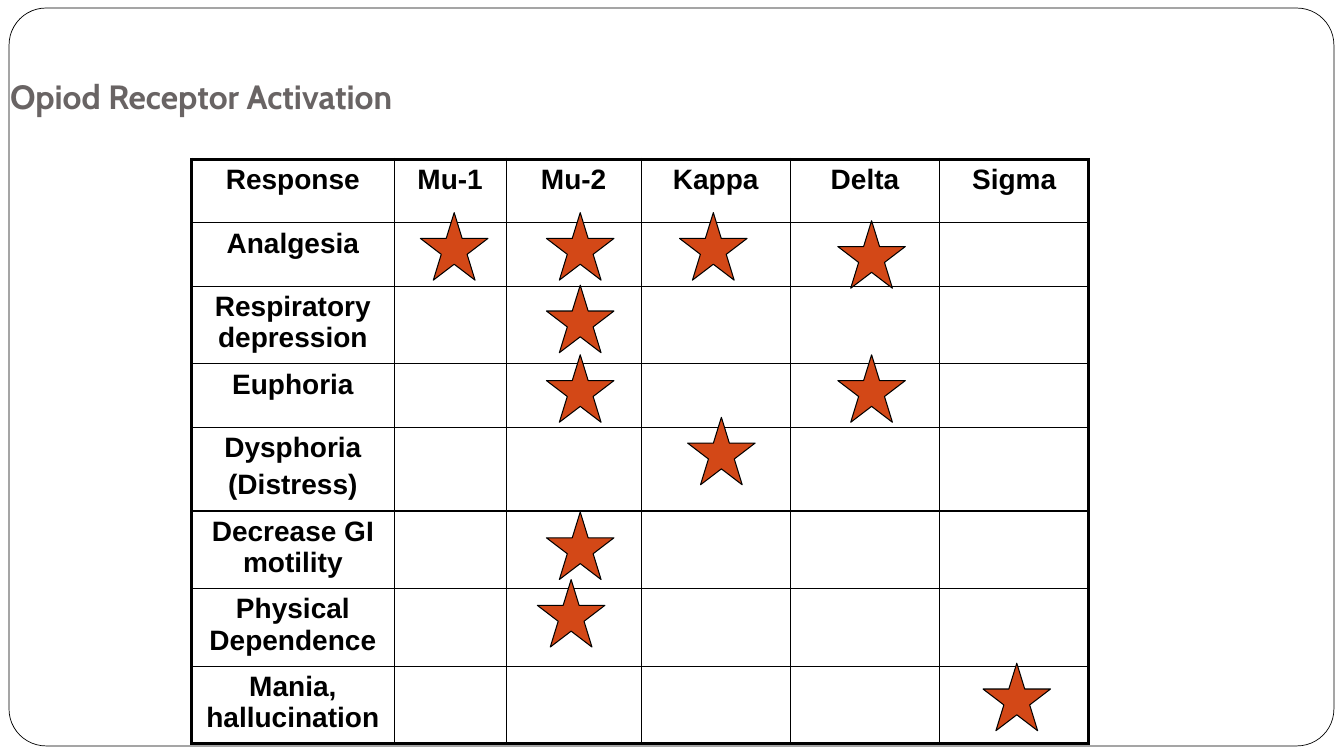
from itertools import accumulate

from lxml.etree import SubElement
from pptx import Presentation
from pptx.dml.color import RGBColor
from pptx.enum.shapes import MSO_SHAPE
from pptx.enum.text import MSO_ANCHOR, MSO_AUTO_SIZE, PP_ALIGN
from pptx.oxml.ns import qn
from pptx.util import Inches, Pt

BLACK = RGBColor(0x00, 0x00, 0x00)
WHITE = RGBColor(0xFF, 0xFF, 0xFF)
GRAY = RGBColor(0x69, 0x64, 0x64)
ORANGE = RGBColor(0xD3, 0x48, 0x17)

# Grid of the table, in inches
LEFT, TOP = 1.9, 1.58
COLS = [2.01, 1.11, 1.34, 1.48, 1.48, 1.48]
ROWS = [0.63, 0.63, 0.77, 0.63, 0.83, 0.77, 0.77, 0.77]
COL_X = list(accumulate(COLS, initial=LEFT))
ROW_Y = list(accumulate(ROWS, initial=TOP))
STAR = 0.67
THIN, THICK = Pt(1), Pt(2.25)

RECEPTORS = ["Mu-1", "Mu-2", "Kappa", "Delta", "Sigma"]
# Each response with its stars: receptor, offset from the cell's corner
RESPONSES = [
    ("Analgesia", [("Mu-1", 0.26, -0.1), ("Mu-2", 0.4, -0.1),
                   ("Kappa", 0.38, -0.1), ("Delta", 0.47, -0.02)]),
    ("Respiratory depression", [("Mu-2", 0.4, -0.01)]),
    ("Euphoria", [("Mu-2", 0.4, -0.09), ("Delta", 0.47, -0.09)]),
    ("Dysphoria\n(Distress)", [("Kappa", 0.46, -0.1)]),
    ("Decrease GI motility", [("Mu-2", 0.4, 0.01)]),
    ("Physical Dependence", [("Mu-2", 0.31, -0.09)]),
    ("Mania, hallucination", [("Sigma", 0.43, -0.03)]),
]


def add_run(p, text, font, size, color):
    r = p.add_run()
    r.text = text
    r.font.name, r.font.size, r.font.bold = font, Pt(size), True
    r.font.color.rgb = color


def add_outlined(s, kind, box, fill, width):
    sp = s.shapes.add_shape(kind, *(Inches(v) for v in box))
    sp.shadow.inherit = False
    sp.fill.solid()
    sp.fill.fore_color.rgb = fill
    sp.line.color.rgb = BLACK
    sp.line.width = Pt(width)
    return sp


def set_title(s, text):
    title = s.shapes.title
    title.left, title.top = Inches(0), Inches(0.3)
    title.width, title.height = Inches(9), Inches(0.95)
    tf = title.text_frame
    tf.auto_size = MSO_AUTO_SIZE.NONE
    tf.word_wrap = True
    tf.vertical_anchor = MSO_ANCHOR.BOTTOM
    tf.margin_left = tf.margin_right = tf.margin_bottom = Inches(0.1)
    tf.margin_top = Inches(0.05)
    p = tf.paragraphs[0]
    p.alignment = PP_ALIGN.LEFT
    add_run(p, text, "Cabin", 24, GRAY)
    return title


def set_borders(cell, edges):
    """Outer edges are thick, inner ones thin."""
    tcPr = cell._tc.get_or_add_tcPr()
    for i, (tag, outer) in enumerate(edges.items()):
        ln = SubElement(tcPr, qn(f"a:{tag}"), w=str(THICK if outer else THIN))
        fill = SubElement(ln, qn("a:solidFill"))
        SubElement(fill, qn("a:srgbClr"), val=str(BLACK))
        tcPr.insert(i, ln)


def fill_cell(cell, text):
    for i, line in enumerate(text.split("\n")):
        tf = cell.text_frame
        p = tf.add_paragraph() if i else tf.paragraphs[0]
        p.alignment = PP_ALIGN.CENTER
        p.space_before = Pt(4 if i else 0)
        add_run(p, line, "Arial", 20, BLACK)


def add_response_table(s):
    frame = s.shapes.add_table(len(ROWS), len(COLS), Inches(LEFT), Inches(TOP),
                               Inches(sum(COLS)), Inches(sum(ROWS)))
    table = frame.table
    table.first_row = table.horz_banding = False
    for col, width in zip(table.columns, COLS):
        col.width = Inches(width)
    for row, height in zip(table.rows, ROWS):
        row.height = Inches(height)
    for r in range(len(ROWS)):
        for c in range(len(COLS)):
            cell = table.cell(r, c)
            cell.fill.background()
            set_borders(cell, {"lnL": c == 0, "lnR": c == len(COLS) - 1,
                               "lnT": r == 0, "lnB": r == len(ROWS) - 1})
    for c, name in enumerate(["Response"] + RECEPTORS):
        fill_cell(table.cell(0, c), name)
    for r, (response, _) in enumerate(RESPONSES, 1):
        fill_cell(table.cell(r, 0), response)


def add_stars(s):
    for r, (_, stars) in enumerate(RESPONSES, 1):
        for receptor, dx, dy in stars:
            x = COL_X[RECEPTORS.index(receptor) + 1] + dx
            add_outlined(s, MSO_SHAPE.STAR_5_POINT,
                         (x, ROW_Y[r] + dy, STAR, STAR), ORANGE, 0.75)


def main():
    prs = Presentation()
    prs.slide_width, prs.slide_height = Inches(13.33), Inches(7.5)
    s = prs.slides.add_slide(prs.slide_layouts[5])

    # Rounded frame behind the title
    title = set_title(s, "Opiod Receptor Activation")
    frame = add_outlined(s, MSO_SHAPE.ROUNDED_RECTANGLE,
                         (0.09, 0.08, 13.14, 7.32), WHITE, 0.5)
    frame.adjustments[0] = 0.05
    title.element.addprevious(frame.element)

    # Responses by receptor
    add_response_table(s)
    add_stars(s)
    prs.save("out.pptx")


if __name__ == "__main__":
    main()
